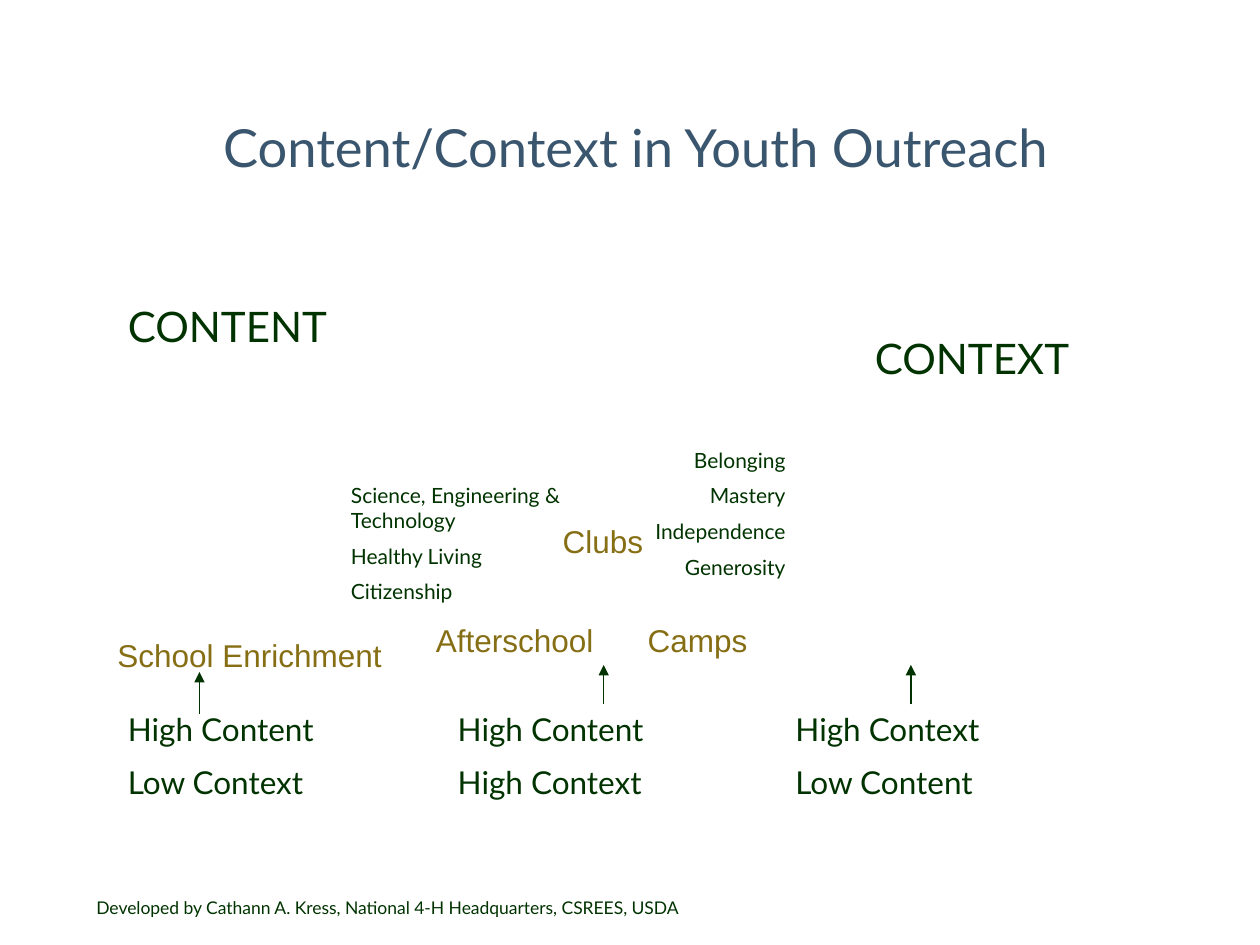
"""Build the slide on content and context in youth outreach."""
from dataclasses import dataclass

from lxml.etree import SubElement
from pptx import Presentation
from pptx.dml.color import RGBColor
from pptx.enum.shapes import MSO_CONNECTOR as Connector
from pptx.enum.text import MSO_ANCHOR as Anchor, PP_ALIGN as Align
from pptx.oxml.ns import qn
from pptx.shapes.base import BaseShape
from pptx.slide import Slide
from pptx.util import Pt

COLORS = {"title": "3A566E", "text": "003300", "program": "866E14"}
COLUMN_TABS = (188.5, 381.5)


@dataclass(frozen=True)
class Label:
    left: float
    top: float
    width: float
    height: float
    lines: tuple[str, ...]
    size: float = 18
    font: str = "Lato"
    color: str = "text"
    align: Align = Align.LEFT
    tabs: tuple[float, ...] = ()


@dataclass(frozen=True)
class Arrow:
    x: float
    bottom: float
    top: float


def program(left: float, top: float, width: float, name: str) -> Label:
    """Describe the label of one youth program."""
    return Label(left, top, width, 29, (name,), font="Arial", color="program")


LABELS = (
    Label(193.5, 272, 158, 101,
          ("Science, Engineering & Technology", "Healthy Living", "Citizenship"), size=12),
    Label(454.5, 186.5, 163.5, 36, ("CONTEXT",), size=24, align=Align.RIGHT),
    program(242, 351.5, 109.5, "Afterschool"),
    program(314.5, 294.5, 67, "Clubs"),
    program(363, 351.5, 109.5, "Camps"),
    Label(324, 252, 132, 108,
          ("Belonging", "Mastery", "Independence", "Generosity"), size=12, align=Align.RIGHT),
    Label(66, 168, 162, 36, ("CONTENT",), size=24),
    program(60, 360, 168, "School Enrichment"),
    Label(66, 402, 540, 61,
          ("High Content\tHigh Content\tHigh Context",
           "Low Context\tHigh Context\tLow Content"), tabs=COLUMN_TABS),
    Label(48, 509, 672, 19.5,
          ("Developed by Cathann A. Kress, National 4-H Headquarters, CSREES, USDA",), size=10),
)
ARROWS = (Arrow(520.5, 402.5, 380), Arrow(345, 402.5, 380), Arrow(114, 408, 384))


def write_text(shape: BaseShape, lines: tuple[str, ...], *, size: float, font: str,
               color: str, align: Align, anchor: Anchor = Anchor.TOP,
               tabs: tuple[float, ...] = ()) -> None:
    """Fill a shape with evenly spaced paragraphs in one format."""
    frame = shape.text_frame
    frame.word_wrap = True
    frame.vertical_anchor = anchor
    for index, line in enumerate(lines):
        paragraph = frame.add_paragraph() if index else frame.paragraphs[0]
        paragraph.alignment = align
        paragraph.space_before = Pt(size / 2 if index else 0)
        if tabs:
            tab_list = SubElement(paragraph._p.get_or_add_pPr(), qn("a:tabLst"))
            for position in tabs:
                SubElement(tab_list, qn("a:tab"), pos=str(Pt(position)), algn="l")
        run = paragraph.add_run()
        run.text = line
        run.font.size = Pt(size)
        run.font.name = font
        run.font.color.rgb = RGBColor.from_string(COLORS[color])


def add_title(slide: Slide, text: str) -> None:
    """Place and format the title placeholder."""
    title = slide.shapes.title
    title.left, title.top, title.width, title.height = Pt(49), Pt(52), Pt(628.5), Pt(63.5)
    write_text(title, (text,), size=30, font="Lato", color="title",
               align=Align.CENTER, anchor=Anchor.MIDDLE)


def add_label(slide: Slide, label: Label) -> None:
    """Draw one text box."""
    box = slide.shapes.add_textbox(
        Pt(label.left), Pt(label.top), Pt(label.width), Pt(label.height))
    write_text(box, label.lines, size=label.size, font=label.font, color=label.color,
               align=label.align, tabs=label.tabs)


def add_arrow(slide: Slide, arrow: Arrow) -> None:
    """Draw one upward arrow."""
    connector = slide.shapes.add_connector(
        Connector.STRAIGHT, Pt(arrow.x), Pt(arrow.bottom), Pt(arrow.x), Pt(arrow.top))
    connector.line.width = Pt(0.75)
    connector.line.color.rgb = RGBColor.from_string(COLORS["text"])
    SubElement(connector.line._get_or_add_ln(), qn("a:tailEnd"), type="triangle")
    SubElement(connector._element.spPr, qn("a:effectLst"))


def main() -> None:
    """Build and save the presentation."""
    presentation = Presentation()
    presentation.slide_width, presentation.slide_height = Pt(720), Pt(540)
    slide = presentation.slides.add_slide(presentation.slide_layouts[5])
    add_title(slide, "Content/Context in Youth Outreach")
    for label in LABELS:
        add_label(slide, label)
    for arrow in ARROWS:
        add_arrow(slide, arrow)
    presentation.save("out.pptx")


if __name__ == "__main__":
    main()
